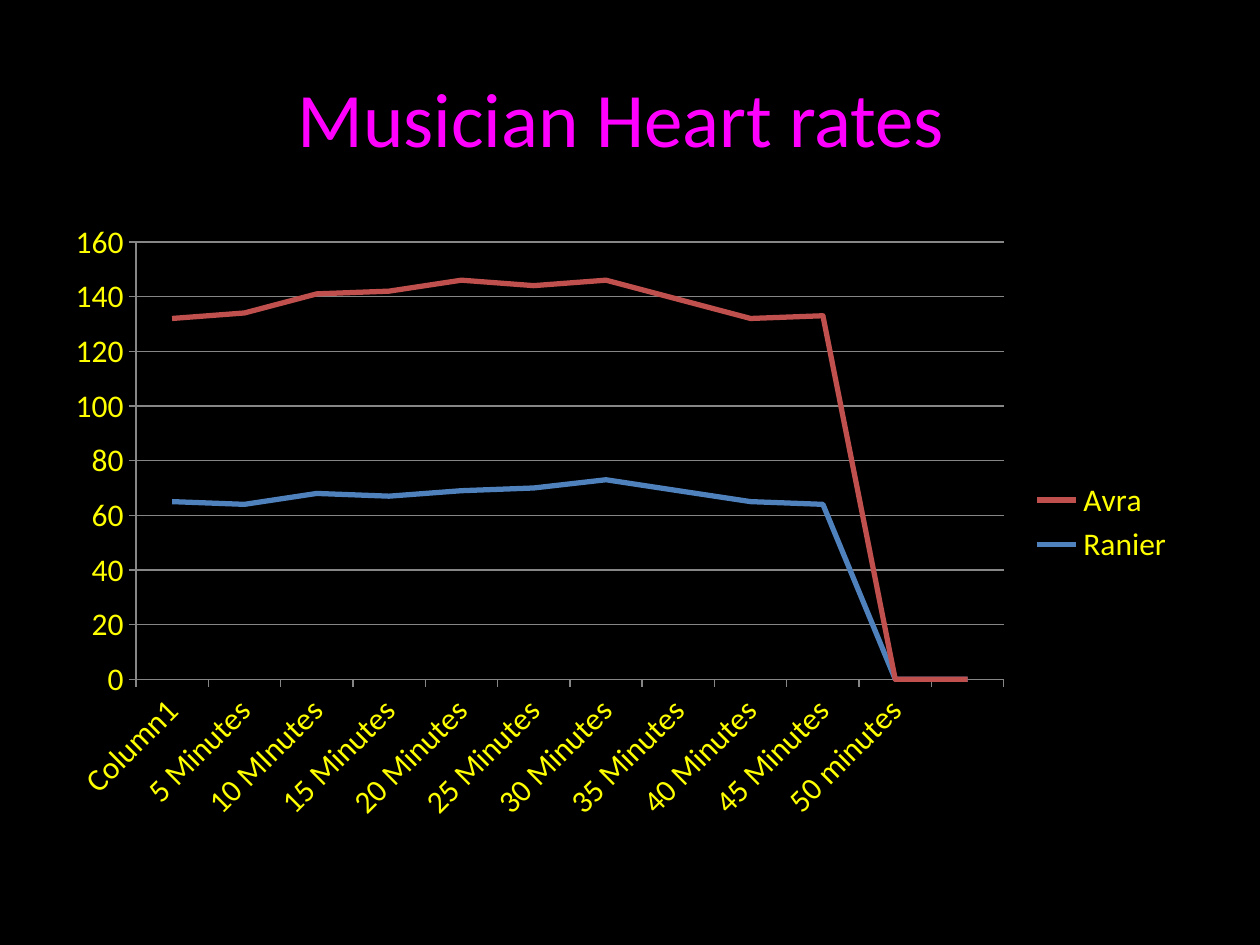
from lxml import etree
from pptx import Presentation
from pptx.chart.data import CategoryChartData
from pptx.dml.color import RGBColor
from pptx.enum import chart as ch, text
from pptx.util import Inches, Pt

BLACK = RGBColor(0x00, 0x00, 0x00)
MAGENTA = RGBColor(0xFF, 0x00, 0xFF)
YELLOW = RGBColor(0xFF, 0xFF, 0x00)
GRAY = RGBColor(0x86, 0x86, 0x86)
BLUE = RGBColor(0x4F, 0x81, 0xBD)
RED = RGBColor(0xC0, 0x50, 0x4D)

TIMES = ["Column1", "5 Minutes", "10 MInutes", "15 Minutes", "20 Minutes",
         "25 Minutes", "30 Minutes", "35 Minutes", "40 Minutes", "45 Minutes",
         "50 minutes", ""]
HEART_RATES = {
    "Ranier": (BLUE, [65, 64, 68, 67, 69, 70, 73, 69, 65, 64, None, None]),
    "Avra": (RED, [67, 70, 73, 75, 77, 74, 73, 70, 67, 69, None, None]),
}


def style_font(font, size, color):
    for attribute, value in {"name": "Calibri", "size": Pt(size), "bold": False}.items():
        setattr(font, attribute, value)
    font.color.rgb = color


prs = Presentation()
prs.slide_width, prs.slide_height = Inches(10), Inches(7.5)
slide = prs.slides.add_slide(prs.slide_layouts[6])
slide.background.fill.solid()
slide.background.fill.fore_color.rgb = BLACK

# Title
title = slide.shapes.add_textbox(Inches(0.5), Inches(0.3), Inches(9), Inches(1.25)).text_frame
title.word_wrap = True
title.vertical_anchor = text.MSO_ANCHOR.MIDDLE
heading = title.paragraphs[0]
heading.alignment = text.PP_ALIGN.CENTER
heading_run = heading.add_run()
heading_run.text = "Musician Heart rates "
style_font(heading_run.font, 44, MAGENTA)

# Heart rate chart
rates = CategoryChartData()
rates.categories = TIMES
for singer, (_, values) in HEART_RATES.items():
    rates.add_series(singer, values)
chart = slide.shapes.add_chart(
    ch.XL_CHART_TYPE.LINE_STACKED, Inches(0.42), Inches(1.67),
    Inches(9), Inches(4.95), rates).chart
chart.has_title = False
style_font(chart.font, 18, YELLOW)

for series, (color, _) in zip(chart.plots[0].series, HEART_RATES.values()):
    series.smooth = False
    series.format.line.width = Pt(3)
    series.format.line.color.rgb = color
    series.marker.style = ch.XL_MARKER_STYLE.NONE

# Missing readings fall to zero
blanks = chart.element.chart.find("{*}dispBlanksAs")
if blanks is None:
    plot_visible = chart.element.chart.find("{*}plotVisOnly")
    blanks = etree.Element(etree.QName(plot_visible).text.replace("plotVisOnly", "dispBlanksAs"))
    plot_visible.addnext(blanks)
blanks.set("val", "zero")

time_axis, rate_axis = chart.category_axis, chart.value_axis
for axis in (time_axis, rate_axis):
    axis.major_tick_mark = ch.XL_TICK_MARK.OUTSIDE
    axis.minor_tick_mark = ch.XL_TICK_MARK.NONE
    axis.format.line.color.rgb = GRAY
    style_font(axis.tick_labels.font, 18, YELLOW)
time_axis.has_major_gridlines = False
time_axis._element.txPr.find("{*}bodyPr").set("rot", "-2700000")
rate_axis.has_major_gridlines = True
rate_axis.major_gridlines.format.line.color.rgb = GRAY
rate_axis.minimum_scale, rate_axis.maximum_scale, rate_axis.major_unit = 0, 160, 20

chart.has_legend = True
chart.legend.position = ch.XL_LEGEND_POSITION.RIGHT
chart.legend.include_in_layout = False
style_font(chart.legend.font, 18, YELLOW)

prs.save("out.pptx")
